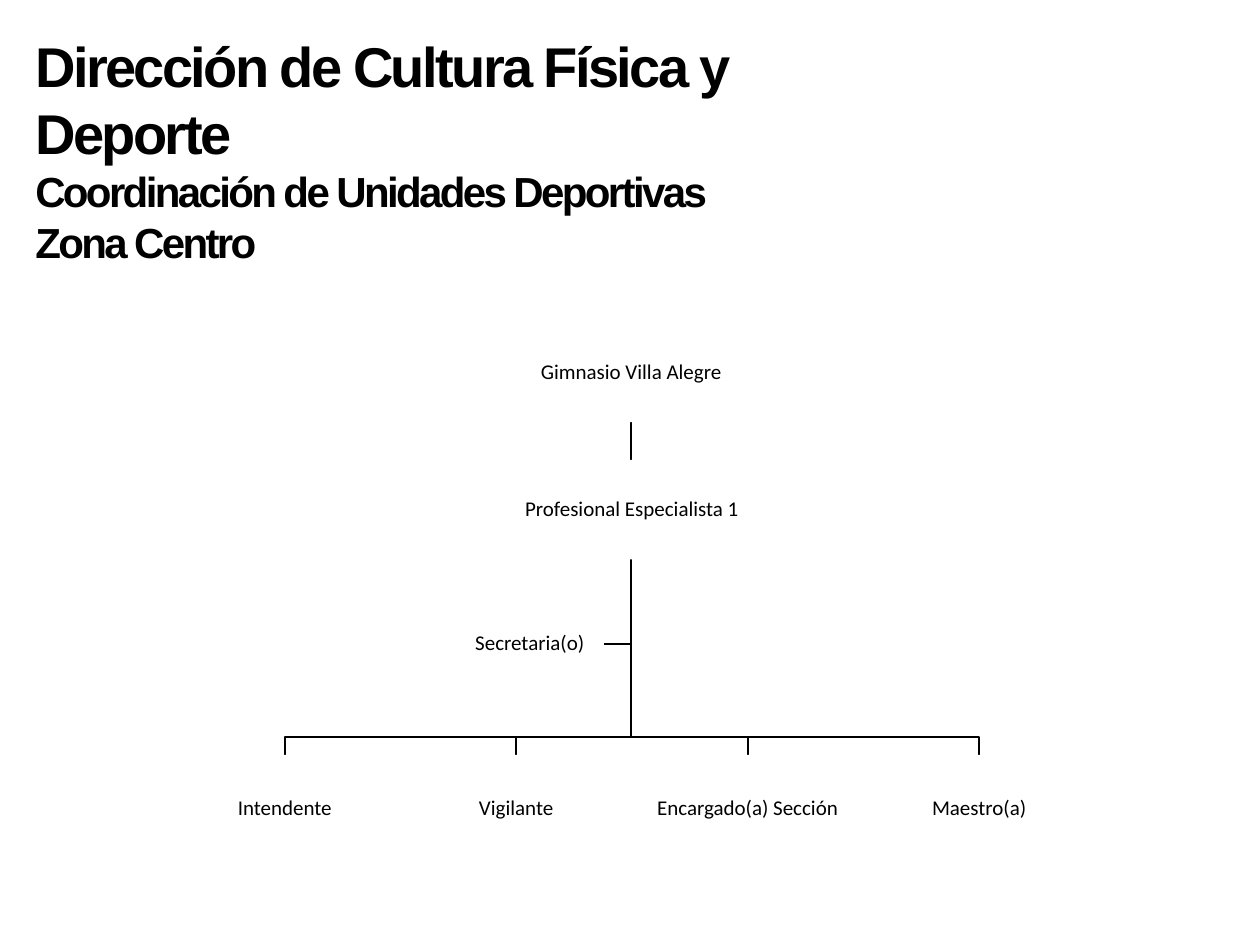
from dataclasses import dataclass

from lxml import etree
from pptx import Presentation
from pptx.dml.color import RGBColor
from pptx.enum.shapes import MSO_CONNECTOR, MSO_SHAPE
from pptx.enum.text import MSO_ANCHOR, MSO_AUTO_SIZE, PP_ALIGN
from pptx.oxml.ns import qn
from pptx.slide import Slide
from pptx.util import Inches, Pt

STRAIGHT = MSO_CONNECTOR.STRAIGHT
RECTANGLE = MSO_SHAPE.RECTANGLE
TOP, MIDDLE = MSO_ANCHOR.TOP, MSO_ANCHOR.MIDDLE
GROW = MSO_AUTO_SIZE.SHAPE_TO_FIT_TEXT
LEFT, CENTER = PP_ALIGN.LEFT, PP_ALIGN.CENTER

COLORS = {"text": "000000", "line": "000000", "box": "FFFFFF"}
TITLE_LINES = [
    ("Dirección de Cultura Física y Deporte", 32),
    ("Coordinación de Unidades Deportivas", 24),
    ("Zona Centro", 24),
]
STAFF = ["Intendente", "Vigilante", "Encargado(a) Sección", "Maestro(a)"]
STAFF_PITCH = 1.837
STAFF_TOP = 5.99
BRANCH_Y = 5.85
AXIS_X = 5.01


@dataclass
class Position:
    label: str
    left: float
    top: float
    width: float
    height: float

    @property
    def center_x(self) -> float:
        return self.left + self.width / 2

    @property
    def center_y(self) -> float:
        return self.top + self.height / 2

    @property
    def right(self) -> float:
        return self.left + self.width

    @property
    def bottom(self) -> float:
        return self.top + self.height


def color(name: str) -> RGBColor:
    return RGBColor.from_string(COLORS[name])


def write_title(page: Slide) -> None:
    title = page.shapes.title
    title.left, title.top = Inches(0.18), Inches(0.2)
    title.width, title.height = Inches(7.21), Inches(1.99)
    frame = title.text_frame
    frame.text = "\n".join(text for text, _ in TITLE_LINES)
    frame.word_wrap = True
    frame.auto_size = GROW
    frame.vertical_anchor = TOP
    for para, (_, size) in zip(frame.paragraphs, TITLE_LINES):
        para.alignment = LEFT
        for span in para.runs:
            span.font.name = "Arial"
            span.font.size = Pt(size)
            span.font.bold = True
            span.font.color.rgb = color("text")
            span.font._element.set("spc", "-150")


def draw_position(page: Slide, position: Position) -> None:
    box = page.shapes.add_shape(
        RECTANGLE, Inches(position.left), Inches(position.top),
        Inches(position.width), Inches(position.height))
    box.shadow.inherit = False
    box.fill.solid()
    box.fill.fore_color.rgb = color("box")
    box.line.fill.background()
    frame = box.text_frame
    frame.text = position.label
    frame.word_wrap = True
    frame.vertical_anchor = MIDDLE
    frame.margin_left = frame.margin_right = Inches(0.01)
    frame.margin_top = frame.margin_bottom = Inches(0.01)
    para = frame.paragraphs[0]
    para.alignment = CENTER
    para.line_spacing = 0.9
    span = para.runs[0]
    span.font.name = "Calibri"
    span.font.size = Pt(12)
    span.font.color.rgb = color("text")


def draw_branch(page: Slide, points: list[tuple[float, float]]) -> None:
    start, *rest = [(Inches(x), Inches(y)) for x, y in points]
    builder = page.shapes.build_freeform(*start)
    builder.add_line_segments(rest, close=False)
    branch = builder.convert_to_shape()
    branch.shadow.inherit = False
    branch.fill.background()
    branch.line.color.rgb = color("line")
    branch.line.width = Pt(1)


def draw_link(page: Slide, top: float, bottom: float) -> None:
    link = page.shapes.add_connector(
        STRAIGHT, Inches(AXIS_X), Inches(top), Inches(AXIS_X), Inches(bottom))
    link.line.color.rgb = color("line")
    link.line.width = Pt(1)
    etree.SubElement(link._element.spPr, qn("a:effectLst"))


def main() -> None:
    deck = Presentation()
    deck.slide_width, deck.slide_height = Inches(10), Inches(7.5)
    page = deck.slides.add_slide(deck.slide_layouts[5])
    write_title(page)

    gym = Position("Gimnasio Villa Alegre", 4.06, 2.56, 1.9, 0.79)
    head = Position("Profesional Especialista 1", 4.07, 3.65, 1.89, 0.79)
    secretary = Position("Secretaria(o)", 3.62, 4.79, 1.17, 0.64)
    staff = [Position(label, 1.49 + index * STAFF_PITCH, STAFF_TOP, 1.54, 0.85)
             for index, label in enumerate(STAFF)]

    start = (AXIS_X, head.bottom)
    draw_branch(page, [start, (AXIS_X, secretary.center_y),
                       (secretary.right, secretary.center_y)])
    for member in reversed(staff):
        draw_branch(page, [start, (AXIS_X, BRANCH_Y),
                           (member.center_x, BRANCH_Y),
                           (member.center_x, member.top)])
    draw_link(page, gym.bottom, head.top)
    for position in [gym, head, *staff, secretary]:
        draw_position(page, position)

    deck.save("out.pptx")


if __name__ == "__main__":
    main()
